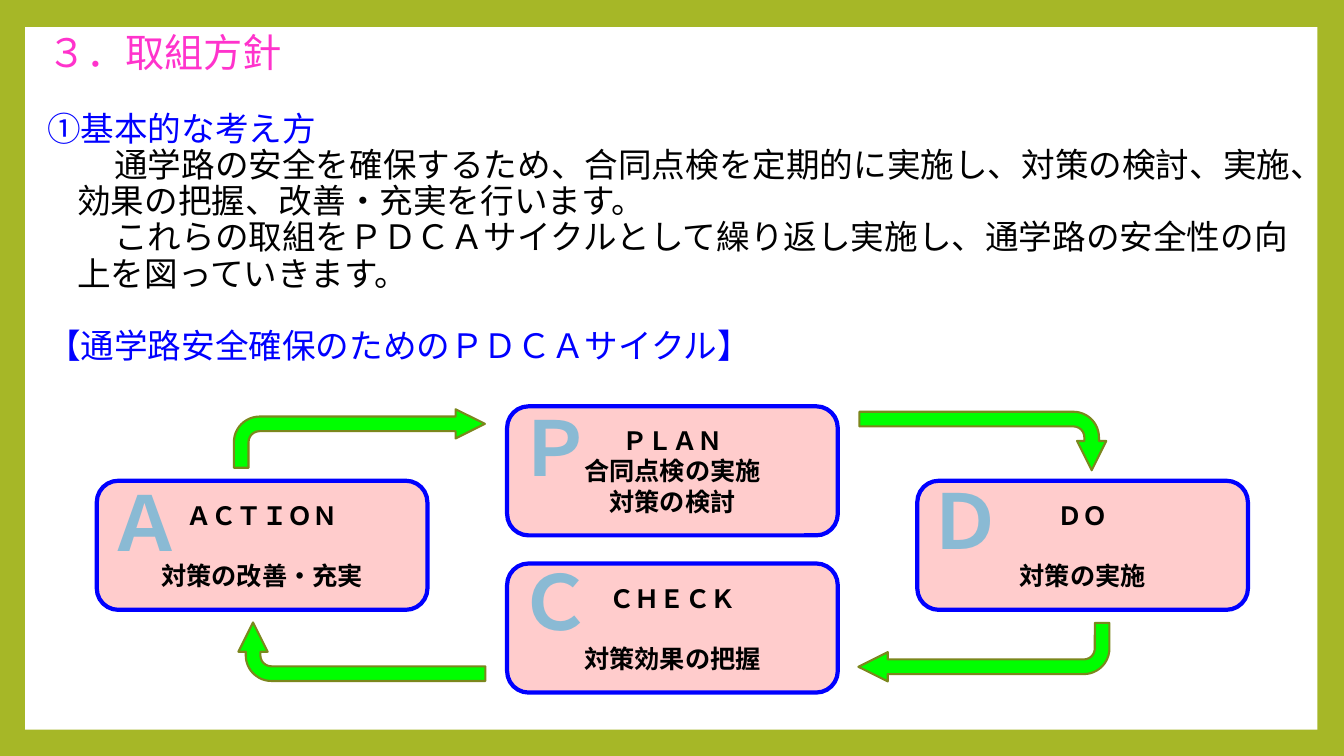
from pptx import Presentation
from pptx.dml.color import RGBColor
from pptx.enum.shapes import MSO_SHAPE as Preset
from pptx.enum.text import MSO_ANCHOR as Anchor, PP_ALIGN as Align
from pptx.util import Pt
from lxml.etree import SubElement
from pptx.oxml.ns import qn

OLIVE = RGBColor(0xA6, 0xB7, 0x27)
DARK_OLIVE = RGBColor(0x7B, 0x87, 0x1D)
WHITE = RGBColor(0xFF, 0xFF, 0xFF)
BLACK = RGBColor(0, 0, 0)
MAGENTA = RGBColor(0xFF, 0x33, 0xCC)
BLUE = RGBColor(0, 0, 0xFF)
PINK = RGBColor(0xFF, 0xCC, 0xCC)
GREEN = RGBColor(0, 0xFF, 0)
SKY = RGBColor(0x8A, 0xBA, 0xD4)
LATIN, JAPANESE = "Calibri", "Noto Sans CJK JP"

# Content: text, size, colour, space before, left margin, first-line indent
POLICY = [
    ("３．取組方針", 28, MAGENTA, 0, 0, 0),
    ("①基本的な考え方", 24, BLUE, 26, 0, 0),
    ("通学路の安全を確保するため、合同点検を定期的に実施し、対策の検討、実施、"
     "効果の把握、改善・充実を行います。", 24, BLACK, 0, 21.6, 26.4),
    ("これらの取組をＰＤＣＡサイクルとして繰り返し実施し、通学路の安全性の"
     "向上を図っていきます。", 24, BLACK, 0, 21.6, 26.4),
    ("【通学路安全確保のためのＰＤＣＡサイクル】", 24, BLUE, 26, 0, 0),
]
# Letter, title, lines, gap after title, left, top, rise of the letter
STEPS = [
    ("Ｐ", "ＰＬＡＮ", ["合同点検の実施", "対策の検討"], 0, 362.2, 290.2, 7.2),
    ("Ｄ", "ＤＯ", ["対策の実施"], 21.4, 655.2, 343.4, 8.6),
    ("Ｃ", "ＣＨＥＣＫ", ["対策効果の把握"], 21.4, 362.2, 402.5, 9.4),
    ("Ａ", "ＡＣＴＩＯＮ", ["対策の改善・充実"], 21.4, 69.1, 343.4, 7.2),
]
STEP_SIZE = (236.2, 92.2)
LETTER_SIZE = (69.1, 72.7)
# Centre x, centre y, length, rotation
ARROWS = [
    (702.8, 465.8, 179.3, 180),
    (256.7, 313.2, 179.3, 0),
    (258.5, 465.5, 176.4, 270),
    (702, 315, 176.4, 90),
]
ARROW_DEPTH = 41.8
ARROW_ADJUSTMENTS = (0.25, 0.25, 0.5, 0.438)


def apply(target, values):
    for name, value in values.items():
        setattr(target, name, value)


def add_shape(shapes, preset, box, fill, line=None, weight=0):
    shape = shapes.add_shape(preset, *map(Pt, box))
    shape.shadow.inherit = False
    shape.fill.solid()
    shape.fill.fore_color.rgb = fill
    if line is None:
        shape.line.fill.background()
    else:
        shape.line.color.rgb = line
        shape.line.width = Pt(weight)
    return shape


def write(frame, index, text, size, color, latin, bold=False, **layout):
    paragraph = frame.paragraphs[0] if index == 0 else frame.add_paragraph()
    apply(paragraph, layout)
    run = paragraph.add_run()
    run.text = text
    apply(run.font, {"size": Pt(size), "bold": bold, "name": latin})
    run.font.color.rgb = color
    SubElement(run.font._element, qn("a:ea"), typeface=JAPANESE)
    return paragraph


presentation = Presentation()
apply(presentation, {"slide_width": Pt(960), "slide_height": Pt(540)})
slide = presentation.slides.add_slide(presentation.slide_layouts[6])

# Frame and white panel
slide.background.fill.solid()
slide.background.fill.fore_color.rgb = OLIVE
add_shape(slide.shapes, Preset.RECTANGLE, (18, 19.4, 923, 501.8), WHITE)

# Policy text
policy = slide.shapes.add_textbox(Pt(26.6), Pt(20.2), Pt(908), Pt(249.8)).text_frame
policy.word_wrap = True
for index, (text, size, color, before, margin, indent) in enumerate(POLICY):
    paragraph = write(policy, index, text, size, color, JAPANESE,
                      line_spacing=0.9, space_before=Pt(before))
    properties = paragraph._p.get_or_add_pPr()
    properties.set("marL", str(Pt(margin)))
    properties.set("indent", str(Pt(indent)))

# Cycle arrows
for center_x, center_y, length, rotation in ARROWS:
    width, height = (length, ARROW_DEPTH) if rotation % 180 == 0 else (ARROW_DEPTH, length)
    box = (center_x - width / 2, center_y - height / 2, width, height)
    arrow = add_shape(slide.shapes, Preset.BENT_ARROW, box, GREEN, DARK_OLIVE, 1.5)
    arrow.rotation = rotation
    for index, value in enumerate(ARROW_ADJUSTMENTS):
        arrow.adjustments[index] = value

# Cycle steps
for letter, title, lines, gap, left, top, rise in STEPS:
    group = slide.shapes.add_group_shape()
    step = add_shape(group.shapes, Preset.ROUNDED_RECTANGLE,
                     (left, top, *STEP_SIZE), PINK, BLUE, 3)
    step.text_frame.vertical_anchor = Anchor.MIDDLE
    for index, text in enumerate([title, *lines]):
        write(step.text_frame, index, text, 18, BLACK, LATIN, True,
              alignment=Align.CENTER, space_before=Pt(gap if index == 1 else 0))
    initial = group.shapes.add_textbox(*map(Pt, (left, top - rise, *LETTER_SIZE)))
    initial.text_frame.word_wrap = False
    write(initial.text_frame, 0, letter, 54, SKY, LATIN, True, alignment=Align.CENTER)

presentation.save("out.pptx")
